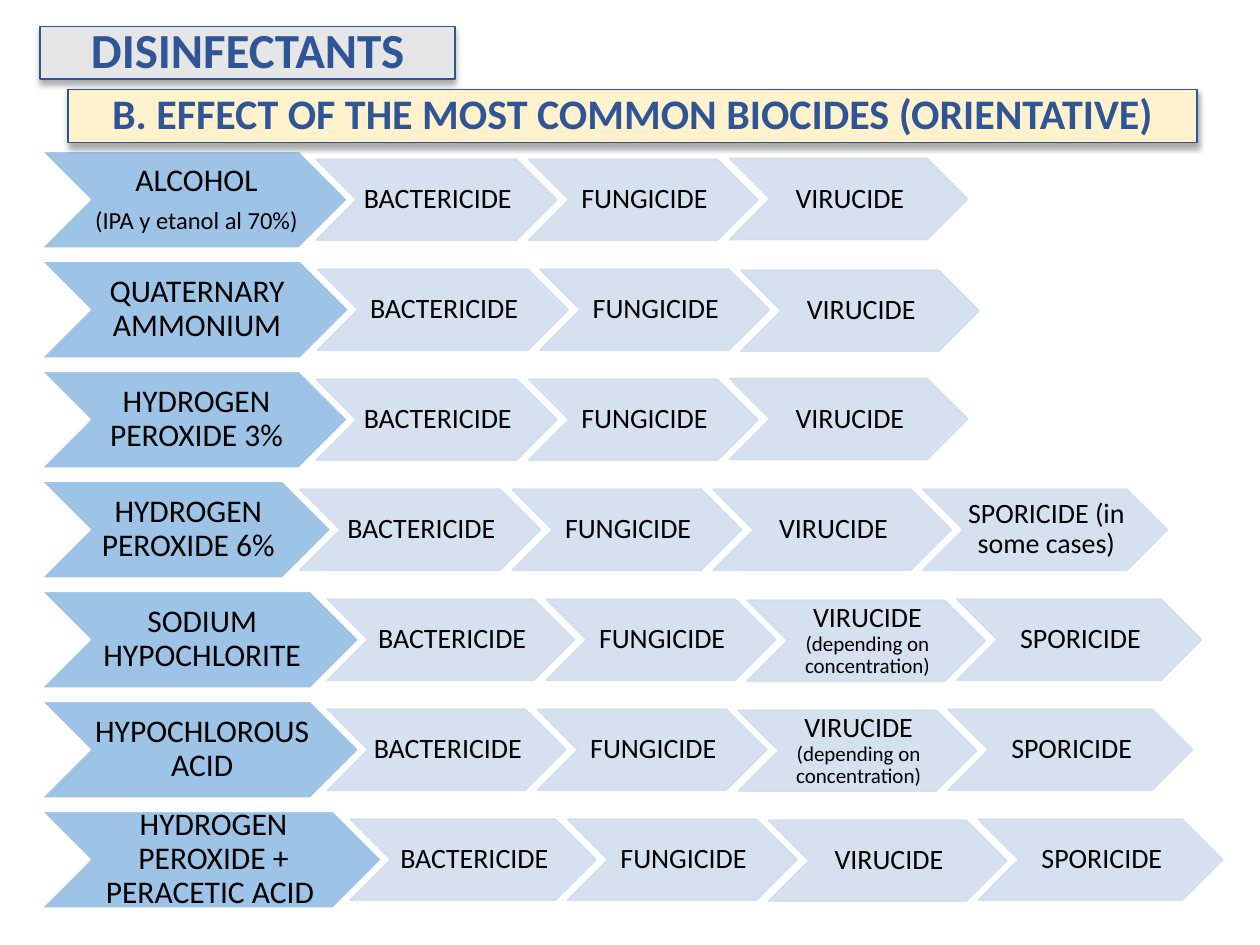
from dataclasses import dataclass

from lxml.etree import SubElement
from pptx import Presentation
from pptx.dml.color import RGBColor
from pptx.enum.shapes import MSO_SHAPE
from pptx.enum.text import MSO_ANCHOR, PP_ALIGN
from pptx.oxml.ns import qn
from pptx.util import Inches, Pt

COLORS = {
    "agent": "9DC3E6",
    "effect": "D2DEEF",
    "white": "FFFFFF",
    "black": "000000",
    "blue": "2F5597",
    "cream": "FFF2CC",
    "gray": "E7E6E6",
}
FONT = "Calibri"
WIDTH, HEIGHT = Inches(10), Inches(7.5)

LEFT, TOP, PITCH = 3.3, 16, 11.64
AGENT_HEIGHT, EFFECT_HEIGHT = 10.27, 8.56
AGENT_OVERLAP, EFFECT_OVERLAP = 2.5, 2.25
FUNGICIDE_WIDTH, VIRUCIDE_WIDTH, SPORICIDE_WIDTH = 18.2, 18.9, 19.4


@dataclass
class Run:
    text: str
    size: int


@dataclass
class Box:
    left: float
    top: float
    width: float
    height: float


@dataclass
class Style:
    fill: str
    line: str
    alpha: int
    inset: float


@dataclass
class Banner:
    text: str
    size: int
    fill: str
    box: Box


@dataclass
class Agent:
    paragraphs: list[list[Run]]
    width: float
    bactericide_width: float
    virucide: list[Run]
    sporicide: str = ""
    virucide_shift: float = 0


AGENT_STYLE = Style("agent", "white", 100, 0.03)
EFFECT_STYLE = Style("effect", "effect", 90, 0.02)
VIRUCIDE = [Run("VIRUCIDE", 16)]
VIRUCIDE_DEPENDING = [Run("VIRUCIDE ", 16), Run("(depending on concentration)", 12)]

AGENTS = [
    Agent([[Run("ALCOHOL", 18)], [Run("(IPA y etanol al 70%)", 14)]],
          24.3, 19.1, VIRUCIDE, virucide_shift=-0.08),
    Agent([[Run("QUATERNARY AMMONIUM", 18)]], 24.4, 19.9, VIRUCIDE, virucide_shift=0.1),
    Agent([[Run("HYDROGEN PEROXIDE 3%", 18)]], 24.3, 19.1, VIRUCIDE, virucide_shift=-0.08),
    Agent([[Run("HYDROGEN PEROXIDE 6%", 18)]], 23, 19.1, VIRUCIDE,
          "SPORICIDE (in some cases)"),
    Agent([[Run("SODIUM HYPOCHLORITE", 18)]], 25.2, 19.6, VIRUCIDE_DEPENDING,
          "SPORICIDE", 0.1),
    Agent([[Run("HYPOCHLOROUS ACID", 18)]], 25.2, 18.9, VIRUCIDE_DEPENDING,
          "SPORICIDE", 0.1),
    Agent([[Run("HYDROGEN PEROXIDE + PERACETIC ACID ", 18)]], 27, 19.5, VIRUCIDE,
          "SPORICIDE", 0.1),
]

BANNERS = [
    Banner("B. EFFECT OF THE MOST COMMON BIOCIDES (ORIENTATIVE)", 24, "cream",
           Box(5.4, 9.47, 89.6, 5.6)),
    Banner("DISINFECTANTS", 28, "gray", Box(3.2, 2.8, 32.9, 5.6)),
]


def rgb(name: str) -> RGBColor:
    return RGBColor.from_string(COLORS[name])


def add_box(s, kind: MSO_SHAPE, box: Box, fill: str, line: str):
    sp = s.shapes.add_shape(
        kind,
        int(WIDTH * box.left / 100), int(HEIGHT * box.top / 100),
        int(WIDTH * box.width / 100), int(HEIGHT * box.height / 100))
    sp.shadow.inherit = False
    sp.fill.solid()
    sp.fill.fore_color.rgb = rgb(fill)
    sp.line.color.rgb = rgb(line)
    sp.line.width = Pt(1)
    sp.text_frame.word_wrap = True
    sp.text_frame.vertical_anchor = MSO_ANCHOR.MIDDLE
    return sp


def write(p, runs: list[Run], color: str, bold: bool = False) -> None:
    p.alignment = PP_ALIGN.CENTER
    p.line_spacing = 0.9
    p.font.name = FONT
    p.font.bold = bold
    p.font.color.rgb = rgb(color)
    for run in runs:
        r = p.add_run()
        r.text = run.text
        r.font.size = Pt(run.size)


def add_chevron(s, box: Box, style: Style, paragraphs: list[list[Run]]) -> None:
    sp = add_box(s, MSO_SHAPE.CHEVRON, box, style.fill, style.line)
    if style.alpha < 100:
        for color in sp._element.spPr.iter(qn("a:srgbClr")):
            SubElement(color, qn("a:alpha"), val=str(style.alpha * 1000))
    tf = sp.text_frame
    tf.margin_left, tf.margin_right = Inches(style.inset), 0
    tf.margin_top = tf.margin_bottom = Inches(0.01)
    for i, runs in enumerate(paragraphs):
        p = tf.add_paragraph() if i else tf.paragraphs[0]
        write(p, runs, "black")
        if i < len(paragraphs) - 1:
            p.space_after = Pt(6)


def add_agent_row(s, row: int, agent: Agent) -> None:
    top = TOP + row * PITCH
    add_chevron(s, Box(LEFT, top, agent.width, AGENT_HEIGHT), AGENT_STYLE, agent.paragraphs)

    effects = [
        ([Run("BACTERICIDE", 16)], agent.bactericide_width, 0),
        ([Run("FUNGICIDE", 16)], FUNGICIDE_WIDTH, 0),
        (agent.virucide, VIRUCIDE_WIDTH, agent.virucide_shift),
    ]
    if agent.sporicide:
        effects.append(([Run(agent.sporicide, 16)], SPORICIDE_WIDTH, 0))

    left = LEFT + agent.width - AGENT_OVERLAP
    effect_top = top + (AGENT_HEIGHT - EFFECT_HEIGHT) / 2
    for runs, width, shift in effects:
        box = Box(left, effect_top + shift, width, EFFECT_HEIGHT)
        add_chevron(s, box, EFFECT_STYLE, [runs])
        left += width - EFFECT_OVERLAP


def add_banner(s, banner: Banner) -> None:
    sp = add_box(s, MSO_SHAPE.RECTANGLE, banner.box, banner.fill, "blue")
    shadow = SubElement(
        sp._element.spPr.find(qn("a:effectLst")), qn("a:outerShdw"),
        blurRad=str(Pt(3.5)), dist=str(Pt(2.2)), dir="5400000", rotWithShape="0")
    color = SubElement(shadow, qn("a:srgbClr"), val=COLORS["black"])
    SubElement(color, qn("a:alpha"), val="32000")
    write(sp.text_frame.paragraphs[0], [Run(banner.text, banner.size)], "blue", True)


def main() -> None:
    prs = Presentation()
    prs.slide_width, prs.slide_height = WIDTH, HEIGHT
    s = prs.slides.add_slide(prs.slide_layouts[6])
    for row, agent in enumerate(AGENTS):
        add_agent_row(s, row, agent)
    for banner in BANNERS:
        add_banner(s, banner)
    prs.save("out.pptx")


if __name__ == "__main__":
    main()
